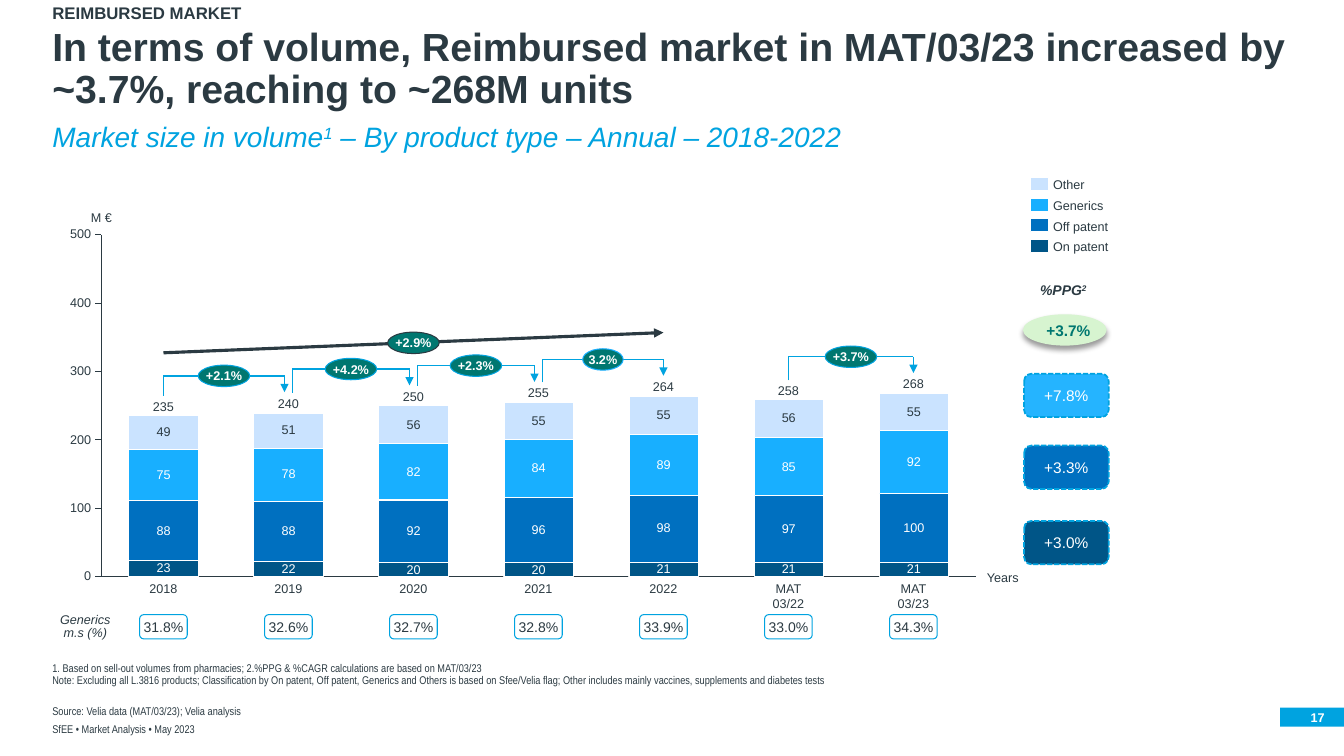
from pptx import Presentation
from pptx.chart.data import CategoryChartData
from pptx.dml.color import RGBColor
from pptx.enum.chart import XL_CHART_TYPE as ChartType, XL_TICK_LABEL_POSITION as LabelPos, XL_TICK_MARK as Tick
from pptx.enum.dml import MSO_LINE as Dash
from pptx.enum.shapes import MSO_CONNECTOR as Connector, MSO_SHAPE as Shape
from pptx.enum.text import MSO_ANCHOR as Anchor, PP_ALIGN as Align
from pptx.oxml import parse_xml
from pptx.oxml.ns import nsdecls
from pptx.util import Cm, Pt

WHITE = RGBColor(0xFF, 0xFF, 0xFF)
INK = RGBColor(0x2B, 0x3A, 0x42)
CYAN = RGBColor(0x00, 0xA3, 0xE0)
TEAL = RGBColor(0x00, 0x77, 0x70)
MINT = RGBColor(0xD7, 0xF4, 0xD0)
NAVY = RGBColor(0x00, 0x55, 0x87)
BLUE = RGBColor(0x00, 0x70, 0xC0)
AZURE = RGBColor(0x18, 0xAF, 0xFF)
SKY = RGBColor(0x25, 0xB4, 0xFF)
PALE = RGBColor(0xCA, 0xE3, 0xFF)

PERIODS = ["2018", "2019", "2020", "2021", "2022", "MAT\n03/22", "MAT\n03/23"]
TOTALS = [235, 240, 250, 255, 264, 258, 268]
GENERICS_SHARE = ["31.8%", "32.6%", "32.7%", "32.8%", "33.9%", "33.0%", "34.3%"]
PRODUCTS = [
    ("On patent", NAVY, WHITE, [23, 22, 20, 20, 21, 21, 21]),
    ("Off patent", BLUE, WHITE, [88, 88, 92, 96, 98, 97, 100]),
    ("Generics", AZURE, WHITE, [75, 78, 82, 84, 89, 85, 92]),
    ("Other", PALE, INK, [49, 51, 56, 55, 55, 56, 55]),
]
GROWTH = [
    (0, 1, 0, -0.1, "+2.1%", 1.3, CYAN),
    (1, 2, 0.1, -0.1, "+4.2%", 1.3, CYAN),
    (2, 3, 0.1, -0.1, "+2.3%", 1.3, CYAN),
    (3, 4, 0.1, 0, "3.2%", 1.02, AZURE),
    (5, 6, 0, 0, "+3.7%", 1.3, CYAN),
]
PPG_CARDS = [(9.42, SKY, "+7.8%"), (11.23, BLUE, "+3.3%"), (13.13, NAVY, "+3.0%")]
HEADINGS = [
    (0.13, 0.46, "REIMBURSED MARKET", Anchor.TOP, dict(size=Pt(12), bold=True), INK),
    (0.66, 2.16, "In terms of volume, Reimbursed market in MAT/03/23 increased by "
     "~3.7%, reaching to ~268M units", Anchor.BOTTOM, dict(size=Pt(28), bold=True), INK),
    (3.12, 0.76, "Market size in volume^1^ – By product type – Annual – 2018-2022",
     Anchor.TOP, dict(size=Pt(20), italic=True), CYAN),
]
FOOTNOTES = [
    (16.69, 0.61, "1. Based on sell-out volumes from pharmacies; 2.%PPG & %CAGR calculations are based on MAT/03/23\n"
     "Note: Excluding all L.3816 products; Classification by On patent, Off patent, Generics and Others "
     "is based on Sfee/Velia flag; Other includes mainly vaccines, supplements and diabetes tests"),
    (17.78, 0.3, "Source: Velia data (MAT/03/23); Velia analysis"),
    (18.24, 0.3, "SfEE • Market Analysis • May 2023"),
]
FIRST_COLUMN, COLUMN_STEP = 4.12, 3.15
BASELINE, PLOT_HEIGHT, AXIS_MAX = 14.54, 8.62, 500


def column_x(index):
    """Return the centre of a chart column in centimetres."""
    return FIRST_COLUMN + COLUMN_STEP * index


def total_y(index):
    """Return the top of the total above a column in centimetres."""
    return BASELINE - TOTALS[index] * PLOT_HEIGHT / AXIS_MAX - 0.41


def apply(target, values):
    """Set each attribute named in a dict."""
    for key, value in values.items():
        setattr(target, key, value)


def write(shape, text, color=INK, align=Align.CENTER, anchor=Anchor.MIDDLE, wrap=False, spacing=1.0, **font):
    """Fill a shape with paragraphs, raising the parts between carets."""
    frame = shape.text_frame
    apply(frame, dict(margin_left=0, margin_right=0, margin_top=0, margin_bottom=0,
                      word_wrap=wrap, vertical_anchor=anchor))
    for number, line in enumerate(text.split("\n")):
        paragraph = frame.add_paragraph() if number else frame.paragraphs[0]
        apply(paragraph, dict(alignment=align, line_spacing=spacing))
        for position, part in enumerate(line.split("^")):
            run = paragraph.add_run()
            run.text = part
            apply(run.font, {"name": "Arial", "size": Pt(9), **font})
            run.font.color.rgb = color
            if position % 2:
                run.font._element.set("baseline", "30000")


def label(slide, left, top, width, height, text, **style):
    """Add a text box."""
    write(slide.shapes.add_textbox(Cm(left), Cm(top), Cm(width), Cm(height)), text, **style)


def block(slide, kind, left, top, width, height, fill=None, line=None, weight=0.75):
    """Add a preset shape with an optional fill and outline."""
    shape = slide.shapes.add_shape(kind, Cm(left), Cm(top), Cm(width), Cm(height))
    shape.shadow.inherit = False
    if fill is None:
        shape.fill.background()
    else:
        shape.fill.solid()
        shape.fill.fore_color.rgb = fill
    if line is None:
        shape.line.fill.background()
    else:
        shape.line.color.rgb = line
        shape.line.width = Pt(weight)
    return shape


def stroke(slide, start, end, color=CYAN, weight=1, arrow=False):
    """Add a straight line, with an arrowhead on request."""
    line = slide.shapes.add_connector(Connector.STRAIGHT, *map(Cm, start + end))
    line.line.color.rgb = color
    line.line.width = Pt(weight)
    if arrow:
        line.line._get_or_add_ln().append(parse_xml(f'<a:tailEnd {nsdecls("a")} type="triangle"/>'))
    line._element.spPr.append(parse_xml(f'<a:effectLst {nsdecls("a")}/>'))


def bubble(slide, x, y, width, text, line):
    """Add a growth ellipse centred on a point."""
    oval = block(slide, Shape.OVAL, x - width / 2, y - 0.27, width, 0.54, TEAL, line)
    write(oval, text, WHITE, bold=True)


def growth_bracket(slide, first, last, start_shift, end_shift, text, width, line):
    """Add a bracket with its growth rate between two columns."""
    left, right = column_x(first) + start_shift, column_x(last) + end_shift
    tip = total_y(last) - 0.11
    level = tip - 0.41
    stroke(slide, (left, total_y(first) - 0.1), (left, level))
    stroke(slide, (left, level), (right, level))
    stroke(slide, (right, level), (right, tip), arrow=True)
    bubble(slide, (left + right) / 2, level, width, text, line)


def volume_chart(slide):
    """Add the stacked columns by product type."""
    data = CategoryChartData(number_format="#,##0")
    data.categories = [period.replace("\n", " ") for period in PERIODS]
    for name, _, _, volumes in PRODUCTS:
        data.add_series(name, volumes)
    chart = slide.shapes.add_chart(ChartType.COLUMN_STACKED, Cm(1.45), Cm(5.66), Cm(23.39), Cm(9.12), data).chart
    apply(chart, dict(has_legend=False, has_title=False))
    apply(chart.font, dict(name="Arial", size=Pt(9)))
    chart.font.color.rgb = INK
    apply(chart.category_axis, dict(tick_label_position=LabelPos.NONE, major_tick_mark=Tick.NONE,
                                    has_major_gridlines=False))
    apply(chart.value_axis, dict(minimum_scale=0, maximum_scale=AXIS_MAX, major_unit=100,
                                 major_tick_mark=Tick.OUTSIDE, has_major_gridlines=False))
    for axis in (chart.category_axis, chart.value_axis):
        axis.format.line.color.rgb = INK
        axis.format.line.width = Pt(0.75)
    plot = chart.plots[0]
    apply(plot, dict(gap_width=80, overlap=100, vary_by_categories=False))
    for series, (_, fill, text_color, _) in zip(plot.series, PRODUCTS):
        series.format.fill.solid()
        series.format.fill.fore_color.rgb = fill
        series.format.line.color.rgb = WHITE
        series.format.line.width = Pt(0.75)
        series.data_labels.show_value = True
        apply(series.data_labels.font, dict(name="Arial", size=Pt(9)))
        series.data_labels.font.color.rgb = text_color
    area = chart._chartSpace.chart.plotArea
    for layout in area.findall("{*}layout"):
        area.remove(layout)
    frame = "".join(f'<c:{key} val="{value}"/>' for key, value in (
        ("layoutTarget", "inner"), ("xMode", "edge"), ("yMode", "edge"),
        ("x", 0.047), ("y", 0.028), ("w", 0.943), ("h", 0.945)))
    area.insert(0, parse_xml(f'<c:layout {nsdecls("c")}><c:manualLayout>{frame}</c:manualLayout></c:layout>'))


def column_labels(slide):
    """Add the total, period and generics share of each column."""
    for index, (period, total, share) in enumerate(zip(PERIODS, TOTALS, GENERICS_SHARE)):
        x = column_x(index)
        label(slide, x - 0.31, total_y(index), 0.62, 0.36, str(total), anchor=Anchor.BOTTOM, spacing=0.9)
        label(slide, x - 0.42, 14.63, 0.84, 0.38, period, anchor=Anchor.TOP)
        write(block(slide, Shape.ROUNDED_RECTANGLE, x - 0.6, 15.49, 1.2, 0.61, line=CYAN), share, size=Pt(10))
    label(slide, 2.29, 5.28, 0.53, 0.38, "M €", anchor=Anchor.BOTTOM)
    label(slide, 24.87, 14.35, 0.84, 0.38, "Years", align=Align.LEFT)
    label(slide, 1.35, 15.49, 1.6, 0.66, "Generics\nm.s (%)", anchor=Anchor.TOP, wrap=True, spacing=0.85, italic=True)


def legend(slide):
    """Add the product type key."""
    for row, (name, fill, _, _) in enumerate(reversed(PRODUCTS)):
        y = 4.47 + 0.52 * row
        block(slide, Shape.RECTANGLE, 25.96, y, 0.46, 0.33, fill, WHITE)
        label(slide, 26.54, y, 1.4, 0.38, name, align=Align.LEFT)


def ppg_panel(slide):
    """Add the growth figures by product type."""
    label(slide, 25.65, 7.04, 2.29, 0.54, "%PPG^2^", wrap=True, size=Pt(10), bold=True, italic=True)
    total = block(slide, Shape.OVAL, 25.78, 7.92, 2.11, 0.79, MINT)
    total._element.spPr.find("{*}effectLst").append(parse_xml(
        f'<a:outerShdw {nsdecls("a")} blurRad="{Pt(4)}" dist="{Pt(3)}" dir="5400000" rotWithShape="0">'
        '<a:srgbClr val="000000"><a:alpha val="40000"/></a:srgbClr></a:outerShdw>'))
    label(slide, 25.78, 8, 2.29, 0.66, "+3.7%", color=TEAL, wrap=True, size=Pt(11), bold=True)
    for y, fill, text in PPG_CARDS:
        card = block(slide, Shape.ROUNDED_RECTANGLE, 25.81, y, 2.13, 1.09, fill, CYAN, 1.25)
        card.line.dash_style = Dash.SQUARE_DOT
        write(card, text, WHITE, size=Pt(11))


def main():
    """Build the reimbursed market slide."""
    deck = Presentation()
    apply(deck, dict(slide_width=Cm(33.87), slide_height=Cm(19.05)))
    slide = deck.slides.add_slide(deck.slide_layouts[6])
    for top, height, text, anchor, font, color in HEADINGS:
        label(slide, 1.32, top, 31.24, height, text, color=color, align=Align.LEFT,
              anchor=anchor, wrap=True, spacing=0.9, **font)
    for top, height, text in FOOTNOTES:
        label(slide, 1.32, top, 31.24, height, text, align=Align.LEFT, anchor=Anchor.BOTTOM,
              wrap=True, spacing=0.9, name="Arial Narrow", size=Pt(8))
    block(slide, Shape.RECTANGLE, 32.26, 17.83, 1.61, 0.48, CYAN)
    label(slide, 32.26, 17.83, 1.12, 0.48, "17", color=WHITE, align=Align.RIGHT, wrap=True, bold=True)
    volume_chart(slide)
    column_labels(slide)
    for bracket in GROWTH:
        growth_bracket(slide, *bracket)
    stroke(slide, (column_x(0), 8.89), (column_x(4), 8.38), INK, 2.25, arrow=True)
    bubble(slide, column_x(2), 8.64, 1.3, "+2.9%", INK)
    legend(slide)
    ppg_panel(slide)
    deck.save("out.pptx")


if __name__ == "__main__":
    main()
